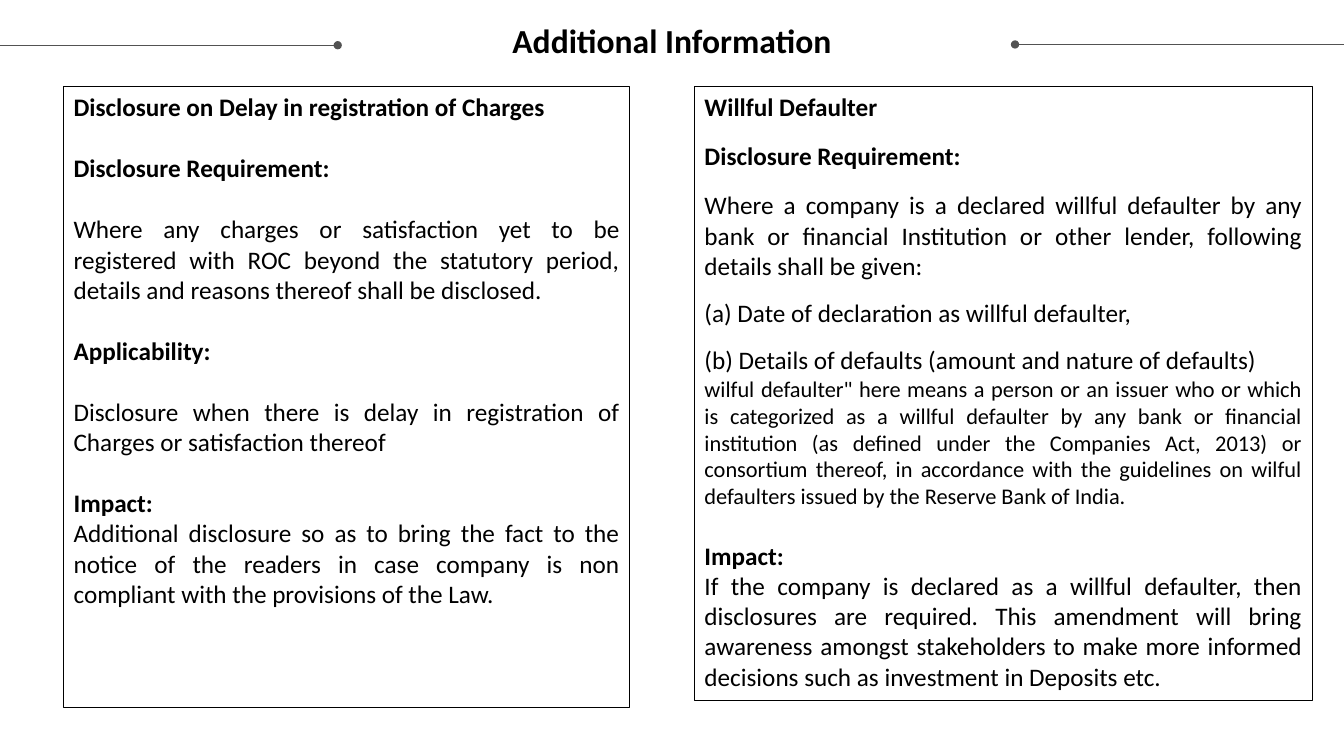
from lxml import etree
from pptx import Presentation
from pptx import util as u
from pptx.dml.color import RGBColor
from pptx.enum import shapes, text
from pptx.oxml.ns import qn

WIDE = 22  # gap of one full text line, in points
MID = 13.4
SLIM = 12.2

# Each paragraph: wording, bold, gap above, size
DELAY = [
    ("Disclosure on Delay in registration of Charges", True, 0, 18),
    ("Disclosure Requirement:", True, WIDE, 18),
    ("Where any charges or satisfaction yet to be registered with ROC beyond "
     "the statutory period, details and reasons thereof shall be disclosed.",
     False, WIDE, 18),
    ("Applicability:", True, WIDE, 18),
    ("Disclosure when there is delay in registration of Charges or "
     "satisfaction thereof", False, WIDE, 18),
    ("Impact:", True, WIDE, 18),
    ("Additional disclosure so as to bring the fact to the notice of the "
     "readers in case company is non compliant with the provisions of the Law.",
     False, 0, 18),
]
WILLFUL = [
    ("Willful Defaulter", True, 0, 18),
    ("Disclosure Requirement:", True, MID, 18),
    ("Where a company is a declared willful defaulter by any bank or financial "
     "Institution or other lender, following details shall be given:",
     False, MID, 18),
    ("(a) Date of declaration as willful defaulter,", False, SLIM, 18),
    ("(b) Details of defaults (amount and nature of defaults)", False, SLIM, 18),
    ('wilful defaulter" here means a person or an issuer who or which is '
     "categorized as a willful defaulter by any bank or financial institution "
     "(as defined under the Companies Act, 2013) or consortium thereof, in "
     "accordance with the guidelines on wilful defaulters issued by the "
     "Reserve Bank of India.", False, 0, 16),
    ("Impact:", True, WIDE, 18),
    ("If the company is declared as a willful defaulter, then disclosures are "
     "required. This amendment will bring awareness amongst stakeholders to "
     "make more informed decisions such as investment in Deposits etc.",
     False, 0, 18),
]


def color(code):
    return RGBColor.from_string(code)


def apply(item, form):
    for key, value in form.items():
        setattr(item, key, value)


class Page:
    font = "Calibri"
    ink = "000000"
    rule = "525252"

    def __init__(self, slide):
        self.slide = slide

    def place(self, shape, left, top, width, height):
        apply(shape, {"left": u.Cm(left), "top": u.Cm(top),
                      "width": u.Cm(width), "height": u.Cm(height)})

    def phrase(self, para, words, bold, size, form):
        run = para.add_run()
        run.text = words
        apply(run.font, {"name": self.font, "size": u.Pt(size), "bold": bold})
        run.font.color.rgb = color(self.ink)
        apply(para, form)

    def title(self, words, *box):
        shape = self.slide.shapes.title
        self.place(shape, *box)
        frame = shape.text_frame
        apply(frame, {"margin_left": 0, "margin_right": 0, "margin_top": 0,
                      "margin_bottom": 0, "word_wrap": True,
                      "auto_size": text.MSO_AUTO_SIZE.NONE,
                      "vertical_anchor": text.MSO_ANCHOR.TOP})
        self.phrase(frame.paragraphs[0], words, True, 24,
                    {"alignment": text.PP_ALIGN.CENTER, "line_spacing": 0.9})

    def panel(self, index, paras, *box):
        shape = self.slide.placeholders[index]
        self.place(shape, *box)
        shape.line.color.rgb = color(self.ink)
        shape.line.width = u.Pt(0.75)
        frame = shape.text_frame
        apply(frame, {"word_wrap": True, "auto_size": text.MSO_AUTO_SIZE.NONE,
                      "vertical_anchor": text.MSO_ANCHOR.TOP})
        for i, (words, bold, gap, size) in enumerate(paras):
            para = frame.add_paragraph() if i else frame.paragraphs[0]
            self.phrase(para, words, bold, size,
                        {"alignment": text.PP_ALIGN.JUSTIFY,
                         "space_before": u.Pt(gap), "space_after": u.Pt(0)})
            props = para._p.get_or_add_pPr()
            props.set("marL", "0")
            props.set("indent", "0")
            etree.SubElement(props, qn("a:buNone"))

    def dotted(self, start, end, y):
        """Draw a level line with a round dot at its end."""
        line = self.slide.shapes.add_connector(
            shapes.MSO_CONNECTOR.STRAIGHT,
            u.Cm(start), u.Cm(y), u.Cm(end), u.Cm(y))
        line.line.color.rgb = color(self.rule)
        line.line.width = u.Pt(0.5)
        props = line._element.spPr
        etree.SubElement(props.find(qn("a:ln")), qn("a:tailEnd"), type="oval")
        etree.SubElement(props, qn("a:effectLst"))


def main():
    deck = Presentation()
    deck.slide_width, deck.slide_height = u.Cm(33.87), u.Cm(19.05)
    page = Page(deck.slides.add_slide(deck.slide_layouts[3]))
    page.dotted(33.87, 25.58, 1.12)
    page.dotted(0, 8.51, 1.14)
    page.title("Additional Information", 0.64, 0.61, 32.59, 0.91)
    page.panel(1, DELAY, 1.6, 2.18, 14.27, 15.65)
    page.panel(2, WILLFUL, 17.5, 2.18, 15.57, 15.47)
    deck.save("out.pptx")


if __name__ == "__main__":
    main()
